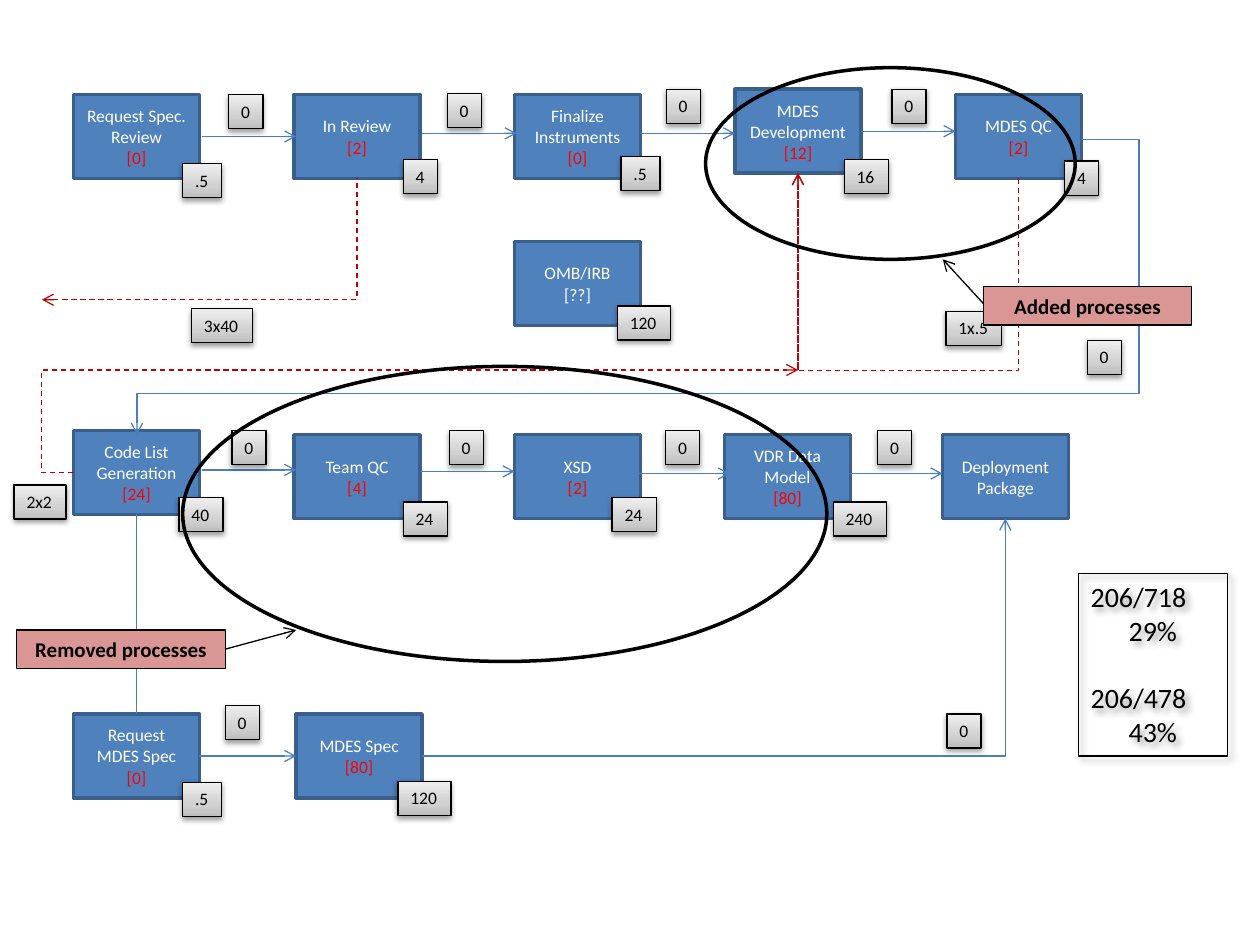
import pptx
import pptx.util
import pptx.oxml
import pptx.oxml.ns
from pptx.dml.color import RGBColor
from pptx.enum.dml import MSO_LINE
from pptx.enum.shapes import MSO_CONNECTOR, MSO_SHAPE
from pptx.enum.text import MSO_ANCHOR, MSO_AUTO_SIZE, PP_ALIGN

theme = {
    "font": "Calibri", "small": 10, "label": 12, "total": 16,
    "box": "4F81BD", "box_line": "3A5F8C", "flow": "4B7EBC", "rework": "C00000",
    "callout": "D99694", "black": "000000", "white": "FFFFFF", "hours": "FF0000",
    "badge": [(0, "BDBDBD"), (35, "D1D1D1"), (100, "EEEEEE")],
    "thin": 0.75, "thick": 2,
}

prs = pptx.Presentation()
prs.slide_width = pptx.util.Inches(10)
prs.slide_height = pptx.util.Inches(7.5)
slide = prs.slides.add_slide(prs.slide_layouts[6])
unit = prs.slide_width / 120
ns = pptx.oxml.ns.nsdecls("a")
LEFT, CENTER = PP_ALIGN.LEFT, PP_ALIGN.CENTER


def place(kind, rect, fill, line, width, paras=(), size=10, shadow=None):
    s = slide.shapes.add_shape(kind, *[pptx.util.Emu(v * unit) for v in rect])
    s.shadow.inherit = False
    if fill:
        s.fill.solid()
        s.fill.fore_color.rgb = RGBColor.from_string(fill)
    else:
        s.fill.background()
    s.line.color.rgb = RGBColor.from_string(line)
    s.line.width = pptx.util.Pt(width)
    if shadow:
        alpha, blur, dist, angle = shadow
        s._element.spPr.find(pptx.oxml.ns.qn("a:effectLst")).append(pptx.oxml.parse_xml(
            f'<a:outerShdw {ns} blurRad="{int(blur * 12700)}" dist="{int(dist * 12700)}" '
            f'dir="{angle * 60000}" rotWithShape="0"><a:srgbClr val="{theme["black"]}">'
            f'<a:alpha val="{alpha * 1000}"/></a:srgbClr></a:outerShdw>'))
    tf = s.text_frame
    tf.word_wrap = True
    for i, (text, color, align) in enumerate(paras):
        p = tf.add_paragraph() if i else tf.paragraphs[0]
        p.text = text
        p.alignment = align
        p.font.name = theme["font"]
        p.font.size = pptx.util.Pt(size)
        p.font.color.rgb = RGBColor.from_string(color)
    return s


def link(x1, y1, x2, y2, color, end="tail", preset=None, adj=(), dash=False):
    kind = MSO_CONNECTOR.ELBOW if preset else MSO_CONNECTOR.STRAIGHT
    c = slide.shapes.add_connector(kind, *[pptx.util.Emu(v * unit) for v in (x1, y1, x2, y2)])
    spPr = c._element.spPr
    if preset:
        geom = spPr.find(pptx.oxml.ns.qn("a:prstGeom"))
        geom.set("prst", preset)
        guides = "".join(f'<a:gd name="adj{i}" fmla="val {round(a * 100000)}"/>'
                         for i, a in enumerate(adj, 1))
        geom.replace(geom[0], pptx.oxml.parse_xml(f"<a:avLst {ns}>{guides}</a:avLst>"))
    c.line.color.rgb = RGBColor.from_string(color)
    c.line.width = pptx.util.Pt(theme["thin"])
    if dash:
        c.line.dash_style = MSO_LINE.DASH
    if end:
        c.line._get_or_add_ln().append(pptx.oxml.parse_xml(f'<a:{end}End {ns} type="arrow"/>'))
    spPr.append(pptx.oxml.parse_xml(f"<a:effectLst {ns}/>"))
    return c


steps = {
    "review": (7, 9, ["Request Spec. Review"], "[0]"),
    "in_review": (28, 9, ["In Review"], "[2]"),
    "finalize": (49, 9, ["Finalize Instruments"], "[0]"),
    "omb": (49, 23, ["OMB/IRB", "[??]"], None),
    "mdes_dev": (70, 8.5, ["MDES Development"], "[12]"),
    "mdes_qc": (91, 9, ["MDES QC"], "[2]"),
    "code_list": (7, 41, ["Code List Generation"], "[24]"),
    "team_qc": (28, 41.4, ["Team QC"], "[4]"),
    "xsd": (49, 41.4, ["XSD"], "[2]"),
    "vdr": (69, 41.4, ["VDR Data Model"], "[80]"),
    "deploy": (89.75, 41.4, ["Deployment Package"], None),
    "request": (7, 68, ["Request", "MDES Spec"], "[0]"),
    "mdes_spec": (28.2, 68, ["MDES Spec"], "[80]"),
}
boxes = {}
for name, (x, y, lines, hours) in steps.items():
    paras = [(t, theme["white"], CENTER) for t in lines]
    if hours:
        paras.append((hours, theme["hours"], CENTER))
    s = place(MSO_SHAPE.RECTANGLE, (x, y, 12, 8), theme["box"], theme["box_line"],
              theme["thick"], paras, theme["small"])
    s.text_frame.vertical_anchor = MSO_ANCHOR.MIDDLE
    boxes[name] = s

for x, y in [(19.2, 13), (40.2, 12.7), (61, 12.7), (19.2, 44.75),
             (40, 44.9), (60.5, 45.1), (80.75, 45.1)]:
    link(x, y, x + 9, y, theme["flow"])
link(82, 12.5, 91, 12.5, theme["flow"]).begin_connect(boxes["mdes_dev"], 3)
c = link(13, 49, 13, 68, theme["flow"], end=None)
c.begin_connect(boxes["code_list"], 2)
c.end_connect(boxes["request"], 0)
c = link(19, 72, 28.2, 72, theme["flow"])
c.begin_connect(boxes["request"], 3)
c.end_connect(boxes["mdes_spec"], 1)
link(103, 13.3, 13.05, 41.4, theme["flow"], preset="bentConnector4", adj=(-0.061, 0.861))
link(40.2, 72, 95.75, 49.4, theme["flow"], preset="bentConnector2")

link(7, 45, 76, 35.25, theme["rework"], preset="bentConnector3", adj=(-0.044,), dash=True)
link(4, 28.55, 34, 17, theme["rework"], end="head", preset="bentConnector2", dash=True)
link(76, 35.25, 76, 16.5, theme["rework"], dash=True).end_connect(boxes["mdes_dev"], 2)
c = link(86.75, 6.25, 86.25, 27.25, theme["rework"], preset="bentConnector3", adj=(-36.5,), dash=True)
c.rotation = 90

badges = {
    "0": (3.25, [(21.8, 9), (42.6, 8.9), (63.45, 8.5), (84.95, 8.5), (22.1, 41), (42.8, 41),
                 (63.4, 41), (83.6, 41), (21.45, 67.2), (90.2, 68), (103.55, 32.4)]),
    "4": (3.25, [(38.4, 15.2), (101.4, 15.35)]),
    ".5": (3.7, [(17.4, 15.6), (59.15, 14.9), (17.4, 74.5)]),
    "16": (4.2, [(80.4, 15.2)]),
    "24": (4.2, [(38.4, 47.8), (58.3, 47.4)]),
    "40": (4.2, [(17.05, 47.4)]),
    "120": (5.05, [(58.8, 29.15), (37.9, 74.4)]),
    "240": (5.05, [(79.35, 47.8)]),
    "2x2": (4.95, [(1.35, 46.2)]),
    "3x40": (5.8, [(18.25, 29.4)]),
    "1x.5": (5.3, [(90.1, 29.65)]),
}
stops = "".join(f'<a:gs pos="{pos * 1000}"><a:srgbClr val="{color}"/></a:gs>'
                for pos, color in theme["badge"])
for text, (w, spots) in badges.items():
    for x, y in spots:
        s = place(MSO_SHAPE.RECTANGLE, (x, y, w, 3.25), None, theme["black"], theme["thin"],
                  [(text, theme["black"], LEFT)], theme["small"], (38, 3.1, 1.6, 90))
        spPr = s._element.spPr
        spPr.replace(spPr.find(pptx.oxml.ns.qn("a:noFill")), pptx.oxml.parse_xml(
            f'<a:gradFill {ns} rotWithShape="1"><a:gsLst>{stops}</a:gsLst>'
            '<a:lin ang="16200000" scaled="0"/></a:gradFill>'))
        s.text_frame.word_wrap = False
        s.text_frame.vertical_anchor = MSO_ANCHOR.TOP
        s.text_frame.auto_size = MSO_AUTO_SIZE.SHAPE_TO_FIT_TEXT

totals = [("206/718", LEFT), ("29%", CENTER), ("206/478", LEFT), ("43%", CENTER)]
s = place(MSO_SHAPE.RECTANGLE, (102.7, 54.6, 14.2, 17.4), None, theme["black"], theme["thin"],
          [(t, theme["black"], a) for t, a in totals], theme["total"], (40, 4, 3, 45))
s.text_frame.vertical_anchor = MSO_ANCHOR.TOP
s.text_frame.paragraphs[2].space_before = pptx.util.Pt(19.5)

for rect in [(17.4, 34.9, 61.35, 28.1), (67.2, 6.45, 35.2, 18.25)]:
    place(MSO_SHAPE.OVAL, rect, None, theme["black"], theme["thick"])

callouts = []
for text, x, y in [("Removed processes", 1.6, 60), ("Added processes", 93.65, 27.3)]:
    s = place(MSO_SHAPE.RECTANGLE, (x, y, 19.85, 3.65), theme["callout"], theme["black"],
              theme["thin"], [(text, theme["black"], CENTER)], theme["label"])
    s.text_frame.paragraphs[0].font.bold = True
    callouts.append(s)
link(21.45, 61.8, 28.2, 60, theme["black"]).begin_connect(callouts[0], 3)
link(93.65, 28.9, 89.8, 24.7, theme["black"])

prs.save("out.pptx")
